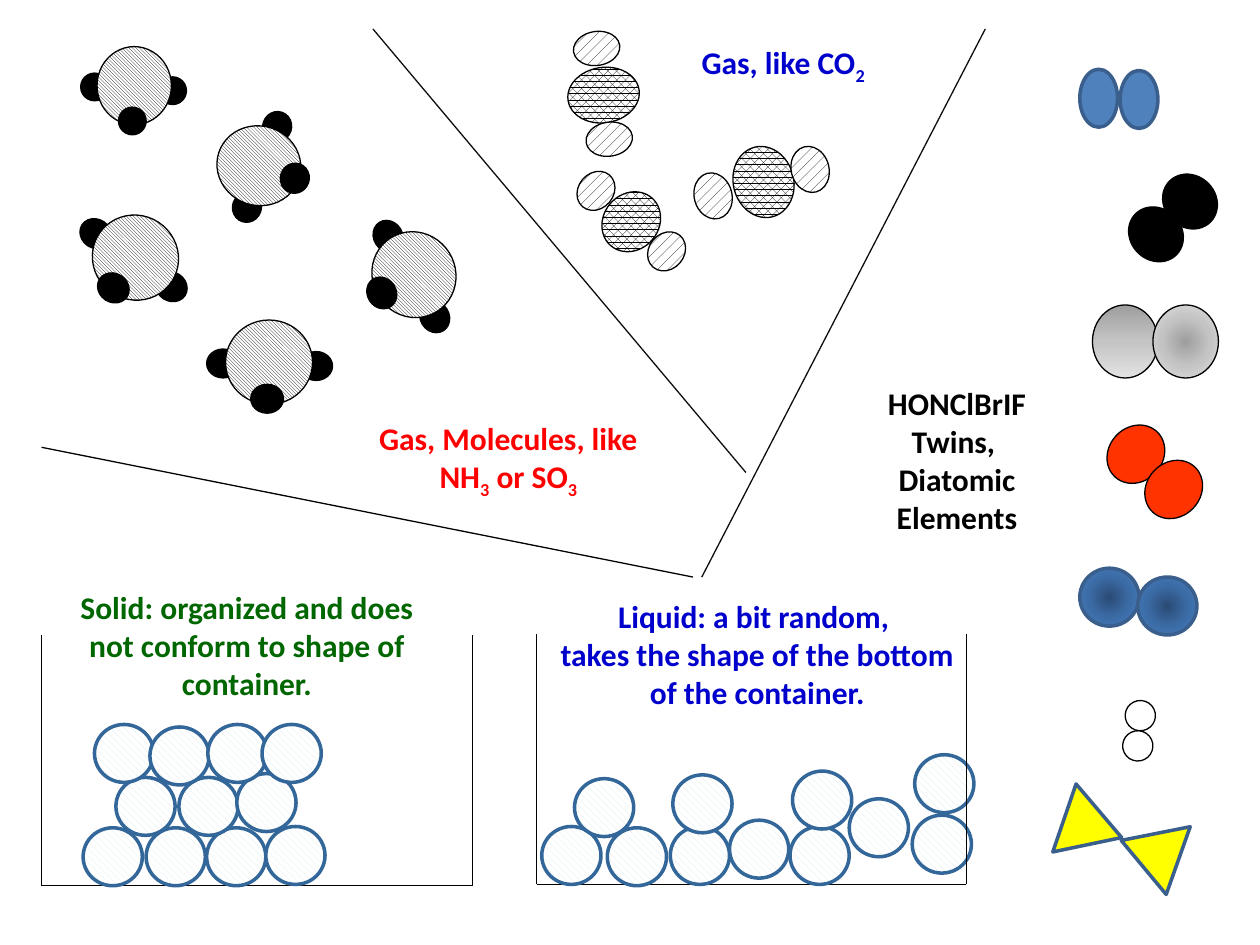
"""Build a slide that sorts particle drawings into solids, liquids, gases and twins."""
from lxml.etree import SubElement
from pptx import Presentation
from pptx.dml.color import RGBColor as Rgb
from pptx.enum.dml import MSO_PATTERN as Pat
from pptx.enum.shapes import MSO_CONNECTOR as Conn, MSO_SHAPE as Form
from pptx.enum.text import PP_ALIGN as Align
from pptx.oxml import parse_xml
from pptx.oxml.ns import nsdecls, qn
from pptx.util import Inches, Pt

HUES = {
    "black": "000000", "ink": "0D0D0D", "white": "FFFFFF", "red": "FF0000",
    "green": "006600", "navy": "0000CC", "orange": "FF3300", "yellow": "FFFF00",
    "blue": "4F81BD", "edge": "3A5F8C", "rim": "336699", "pale": "D6ECEE",
}
BLUES = ["2A4C75", "3C6CA6", "4780C5"]
GREYS = ["9E9E9E", "C4C4C4", "E3E3E3"]
LINEAR = '<a:lin ang="5400000" scaled="0"/>'
RADIAL = ('<a:path path="circle"><a:fillToRect l="50000" t="50000" '
          'r="50000" b="50000"/></a:path>')

# style: fill, line colour, line width
STYLES = {
    "black": ("black", "black", 0.75),
    "white": ("white", "black", 0.75),
    "orange": ("orange", "black", 0.75),
    "blue": ("blue", "edge", 2),
    "yellow": ("yellow", "edge", 2),
    "core": ((Pat.PERCENT_70, "black"), "black", 0.75),
    "dots": ((Pat.PERCENT_20, "black"), "black", 0.75),
    "hatch": ((Pat.LIGHT_DOWNWARD_DIAGONAL, "black"), "black", 0.75),
    "drop": ((Pat.WIDE_DOWNWARD_DIAGONAL, "pale"), "rim", 2),
    "shade": ((GREYS, LINEAR), "black", 0.75),
    "glow": ((GREYS, RADIAL), "black", 0.75),
    "deep": ((BLUES, RADIAL), "edge", 2),
}

TWINS = [
    (0, 0.52, 0.58, [("shade", 8.67, 2.42), ("glow", 9.15, 2.42)]),
    (315.2, 0.41, 0.46, [("black", 8.97, 1.63), ("black", 9.24, 1.37)]),
    (42.7, 0.43, 0.49, [("orange", 8.8, 3.36), ("orange", 9.1, 3.64)]),
    (94.1, 0.24, 0.24, [("white", 8.93, 5.56), ("white", 8.91, 5.8)]),
    (0, 0.3, 0.46, [("blue", 8.57, 0.55), ("blue", 8.89, 0.56)]),
    (0, 0.47, 0.46, [("deep", 8.57, 4.51), ("deep", 9.03, 4.58)]),
]
# rotation, body box, atom size, atom corners
TRIOS = [
    (345.1, (5.82, 1.16, 0.48, 0.57), (0.3, 0.37), [(6.28, 1.16), (5.51, 1.37)]),
    (81.6, (4.57, 0.47, 0.44, 0.57), (0.27, 0.37), [(4.7, 0.92), (4.6, 0.2)]),
    (40.2, (4.79, 1.51, 0.44, 0.5), (0.28, 0.33), [(5.15, 1.83), (4.59, 1.35)]),
]
QUADS = [
    (57.9, (2.94, 1.85, 0.69, 0.66), (0.26, 0.23),
     [(3.32, 2.4), (2.95, 1.76), (2.9, 2.21)]),
    (0, (1.79, 2.54, 0.69, 0.67), (0.26, 0.23),
     [(2.38, 2.79), (1.64, 2.77), (1.99, 3.05)]),
    (0, (0.77, 0.37, 0.59, 0.62), (0.22, 0.22),
     [(1.26, 0.61), (0.64, 0.58), (0.94, 0.85)]),
    (33, (0.73, 1.71, 0.69, 0.67), (0.26, 0.23),
     [(1.23, 2.16), (0.63, 1.74), (0.77, 2.17)]),
    (288.5, (1.74, 0.98, 0.63, 0.67), (0.24, 0.23),
     [(2.08, 0.89), (1.84, 1.53), (2.22, 1.3)]),
]
KITES = [(289.5, 8.84, 6.51), (108.9, 8.39, 6.33)]
BORDERS = [
    (7.82, 0.23, 5.57, 4.58, "ink"),
    (2.96, 0.23, 5.92, 3.75, "ink"),
    (5.5, 4.58, 0.33, 3.55, "black"),
]
# left, right, top, bottom, ball corners
TANKS = [
    (0.33, 3.75, 5.04, 7.03,
     [(0.66, 6.57), (1.16, 6.57), (1.64, 6.57), (2.11, 6.56),
      (0.92, 6.17), (1.42, 6.17), (1.88, 6.14),
      (0.75, 5.75), (1.19, 5.77), (1.65, 5.75), (2.08, 5.75)]),
    (4.26, 7.67, 5.03, 7.02,
     [(4.3, 6.56), (5.32, 6.56), (5.79, 6.51), (6.74, 6.34), (4.82, 6.57),
      (5.34, 6.15), (6.27, 6.56), (4.56, 6.18), (6.29, 6.12),
      (7.26, 5.99), (7.24, 6.47)]),
]
# box, colour, alignment, runs (every second run is a subscript)
LABELS = [
    ((0.53, 4.62, 2.86, 1.01), "green", Align.CENTER,
     ["Solid: organized and does not conform to shape of container."]),
    ((4.3, 4.69, 3.42, 1.01), "navy", Align.CENTER,
     ["Liquid: a bit random, \vtakes the shape of the bottom of the container."]),
    ((2.82, 3.28, 2.43, 0.71), "red", Align.CENTER,
     ["Gas, Molecules, like NH", "3", " or SO", "3"]),
    ((6.74, 3, 1.71, 1.31), "black", Align.CENTER,
     ["HONClBrIF\vTwins, \vDiatomic Elements"]),
    ((5.47, 0.29, 1.79, 0.71), "navy", Align.LEFT, ["Gas, like CO", "2"]),
]


def hue(name):
    return Rgb.from_string(HUES[name])


def blend(shape, tones, way):
    stops = "".join(f'<a:gs pos="{i * 50000}"><a:srgbClr val="{tone}"/></a:gs>'
                    for i, tone in enumerate(tones))
    props = shape.element.spPr
    props.find(qn("a:prstGeom")).addnext(parse_xml(
        f'<a:gradFill {nsdecls("a")} rotWithShape="1">'
        f'<a:gsLst>{stops}</a:gsLst>{way}</a:gradFill>'))


def ball(home, style, box, turn=0, form=Form.OVAL):
    shape = home.add_shape(form, *map(Inches, box))
    shape.rotation = turn
    shape.shadow.inherit = False
    fill, edge, width = STYLES[style]
    if isinstance(fill, str):
        shape.fill.solid()
        shape.fill.fore_color.rgb = hue(fill)
    elif isinstance(fill[0], list):
        blend(shape, *fill)
    else:
        shape.fill.patterned()
        shape.fill.pattern = fill[0]
        shape.fill.fore_color.rgb = hue(fill[1])
        shape.fill.back_color.rgb = hue("white")
    shape.line.color.rgb = hue(edge)
    shape.line.width = Pt(width)


def rule(home, x1, y1, x2, y2, tone="black"):
    line = home.add_connector(Conn.STRAIGHT, *map(Inches, (x1, y1, x2, y2)))
    line.line.color.rgb = hue(tone)
    line.line.width = Pt(0.75)
    SubElement(line._element.spPr, qn("a:effectLst"))


def label(home, box, tone, align, parts):
    frame = home.add_textbox(*map(Inches, box)).text_frame
    frame.word_wrap = True
    frame.text = parts[0]
    para = frame.paragraphs[0]
    para.alignment = align
    for i, part in enumerate(parts[1:], 1):
        run = para.add_run()
        run.text = part
        if i % 2:
            run.font._element.set("baseline", "-25000")
    for run in para.runs:
        font = run.font
        font.name, font.size, font.bold = "Calibri", Pt(18), True
        font.color.rgb = hue(tone)


def main():
    deck = Presentation()
    deck.slide_width, deck.slide_height = Inches(10), Inches(7.5)
    home = deck.slides.add_slide(deck.slide_layouts[6]).shapes

    for turn, wide, high, pair in TWINS:
        group = home.add_group_shape().shapes
        for style, x, y in pair:
            ball(group, style, (x, y, wide, high), turn)
    for turn, body, size, spots in TRIOS:
        group = home.add_group_shape().shapes
        ball(group, "core", body, turn)
        for spot in spots:
            ball(group, "dots", spot + size, turn)
    for turn, body, size, spots in QUADS:
        group = home.add_group_shape().shapes
        for spot in spots[:-1]:
            ball(group, "black", spot + size, turn)
        ball(group, "hatch", body, turn)
        ball(group, "black", spots[-1] + size, turn)
    for turn, x, y in KITES:
        ball(home, "yellow", (x, y, 0.57, 0.48), turn, Form.ISOSCELES_TRIANGLE)
    for border in BORDERS:
        rule(home, *border)
    for left, right, top, base, spots in TANKS:
        rule(home, left, base, right, base)
        for spot in spots:
            ball(home, "drop", spot + (0.47, 0.46))
        for side in (left, right):
            rule(home, side, base, side, top)
    for item in LABELS:
        label(home, *item)
    deck.save("out.pptx")


if __name__ == "__main__":
    main()
